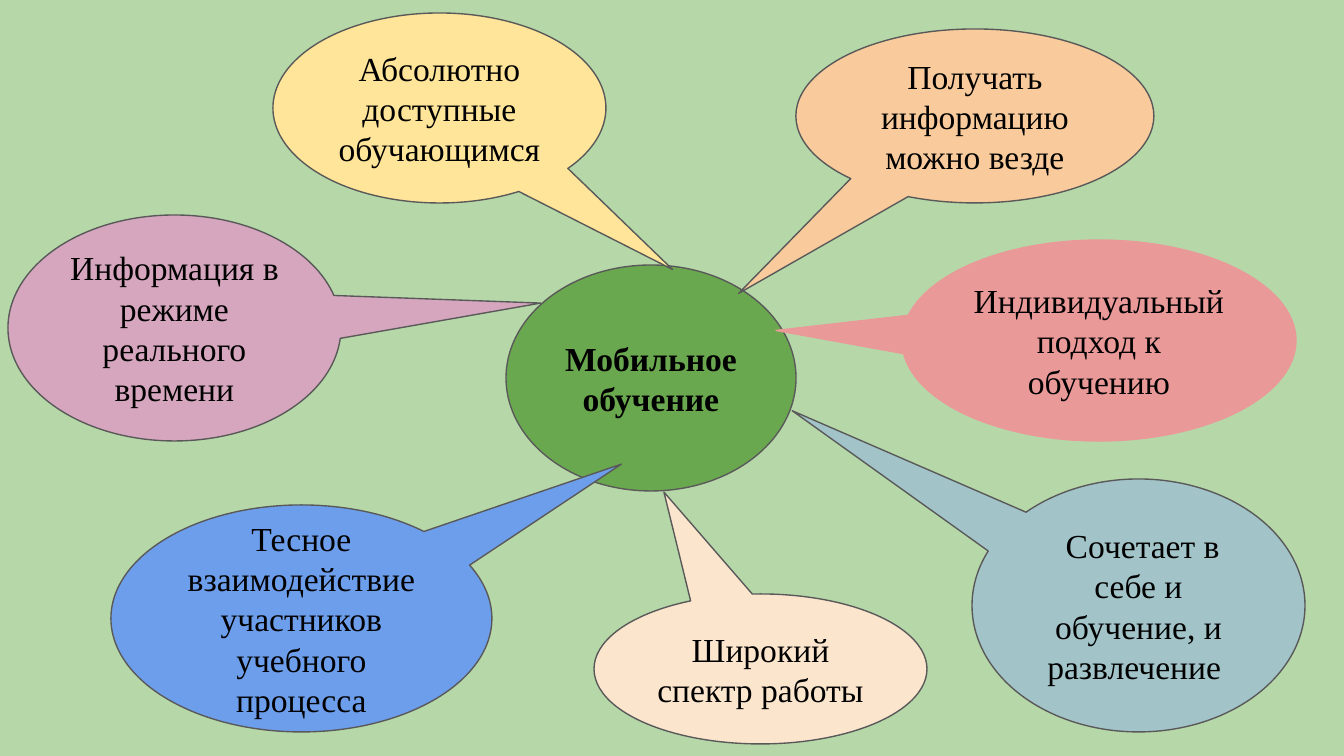
from pptx import Presentation
from pptx.dml.color import RGBColor as Rgb
from pptx.enum.shapes import MSO_SHAPE as Kind
from pptx.enum.text import MSO_ANCHOR as Anchor, PP_ALIGN as Align
from pptx.util import Emu, Pt

SCALE = 9144000 / 1344
HUES = {
    "back": "B6D7A8", "edge": "595959", "ink": "000000",
    "green": "6AA84F", "rose": "EA9999", "peach": "F9CB9C",
    "yellow": "FFE599", "blue": "6D9EEB", "cream": "FCE5CD",
    "mauve": "D5A6BD", "teal": "A2C4C9",
}
FRAME = {"word_wrap": True, "vertical_anchor": Anchor.MIDDLE}
FONT = {"name": "Times New Roman", "size": Pt(18)}
CORE = ("Мобильное обучение", (506, 265, 290, 226), "green")
CALLS = [
    ("Индивидуальный подход к обучению",
     (902, 240, 394, 201), (-0.82, -0.05), "rose", "rose"),
    ("Получать информацию можно везде",
     (796, 29, 358, 174), (-0.66, 1.02), "peach", "edge"),
    ("Абсолютно доступные обучающимся",
     (273, 13, 333, 190), (0.7, 0.85), "yellow", "edge"),
    ("Тесное взаимодействие участников учебного процесса",
     (111, 505, 381, 227), (0.84, -0.68), "blue", "edge"),
    ("Широкий спектр работы ",
     (594, 594, 333, 150), (-0.29, -1.18), "cream", "edge"),
    ("Информация в режиме реального времени",
     (8, 215, 333, 226), (1.1, -0.11), "mauve", "edge"),
    (" Сочетает в себе и обучение, и развлечение ",
     (972, 479, 333, 253), (-1.04, -0.77), "teal", "edge"),
]


def px(num):
    """Turn px into EMU."""
    return Emu(round(num * SCALE))


def hue(name):
    """Look up a colour by name."""
    return Rgb.from_string(HUES[name])


def apply(item, form):
    """Set each format value on the item."""
    for key, val in form.items():
        setattr(item, key, val)


def paint(fill, name):
    """Make a fill solid in the named colour."""
    fill.solid()
    fill.fore_color.rgb = hue(name)


def write(shape, text, bold):
    """Put centred text in a shape."""
    frame = shape.text_frame
    apply(frame, FRAME)
    sides = ("left", "top", "right", "bottom")
    apply(frame, {f"margin_{side}": Pt(7.2) for side in sides})
    par = frame.paragraphs[0]
    par.alignment = Align.CENTER
    run = par.add_run()
    run.text = text
    apply(run.font, {**FONT, "bold": bold})
    run.font.color.rgb = hue("ink")


def add_oval(slide, kind, text, box, fill, edge="edge", bold=False):
    """Add a filled, outlined oval with text."""
    shape = slide.shapes.add_shape(kind, *map(px, box))
    shape.shadow.inherit = False
    paint(shape.fill, fill)
    paint(shape.line.fill, edge)
    shape.line.width = Pt(0.75)
    write(shape, text, bold)
    return shape


def add_call(slide, text, box, tip, fill, edge):
    """Add an oval callout whose tip is set relative to its box."""
    shape = add_oval(slide, Kind.OVAL_CALLOUT, text, box, fill, edge)
    for num, val in enumerate(tip):
        shape.adjustments[num] = val


def main():
    """Build and save the slide."""
    deck = Presentation()
    apply(deck, {"slide_width": px(1344), "slide_height": px(756)})
    slide = deck.slides.add_slide(deck.slide_layouts[6])
    paint(slide.background.fill, "back")
    add_oval(slide, Kind.OVAL, *CORE, bold=True)
    for call in CALLS:
        add_call(slide, *call)
    deck.save("out.pptx")


if __name__ == "__main__":
    main()
